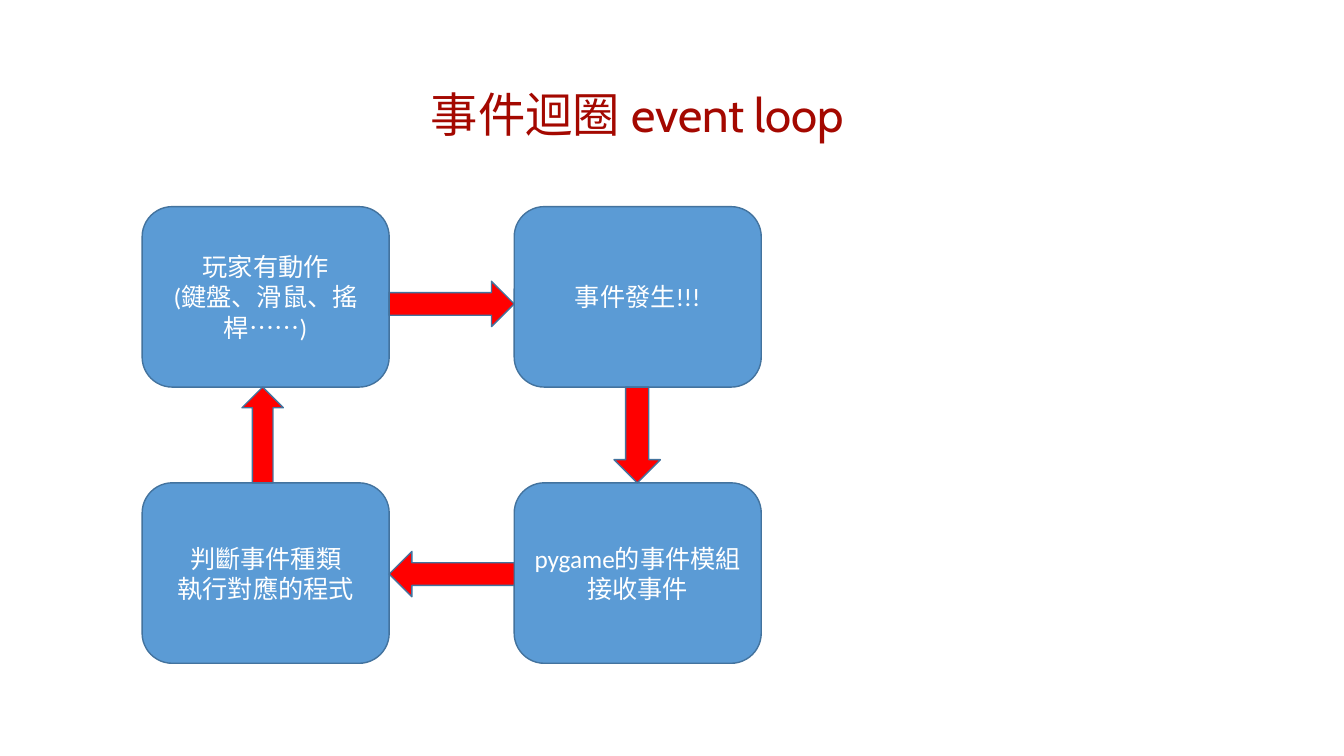
from pptx import Presentation
from pptx.dml.color import RGBColor
from pptx.enum.shapes import MSO_SHAPE as Shape
from pptx.enum.text import MSO_ANCHOR as Anchor, PP_ALIGN as Align
from pptx.util import Inches, Pt

TITLE = "事件迴圈 event loop"
# column, row, text
STEPS = [
    (0, 0, "玩家有動作\n(鍵盤、滑鼠、搖桿……)"),
    (1, 0, "事件發生!!!"),
    (1, 1, "pygame的事件模組接收事件"),
    (0, 1, "判斷事件種類\n執行對應的程式"),
]
COLUMNS, ROWS = (1.41, 5.1), (2.05, 4.79)
STEP_W, STEP_H = 2.45, 1.79
GAP_X = COLUMNS[1] - COLUMNS[0] - STEP_W
GAP_Y = ROWS[1] - ROWS[0] - STEP_H
GAP_LEFT, GAP_TOP = COLUMNS[0] + STEP_W, ROWS[0] + STEP_H
# preset, left, top, width, height, rotation
ARROWS = [
    (Shape.RIGHT_ARROW, GAP_LEFT, 2.79, GAP_X, 0.45, 0),
    (Shape.DOWN_ARROW, 6.09, GAP_TOP, 0.46, GAP_Y, 0),
    (Shape.RIGHT_ARROW, GAP_LEFT, 5.47, GAP_X, 0.45, 180),
    (Shape.DOWN_ARROW, 2.4, GAP_TOP, 0.41, GAP_Y, 180),
]


def color(value):
    return RGBColor.from_string(value)


def write(shape, text, font, size, ink):
    """Fill the shape with centred text, one paragraph per line."""
    frame = shape.text_frame
    frame.word_wrap = True
    frame.vertical_anchor = Anchor.MIDDLE
    frame.text = text
    for paragraph in frame.paragraphs:
        paragraph.alignment = Align.CENTER
        for run in paragraph.runs:
            run.font.name = font
            run.font.size = Pt(size)
            run.font.color.rgb = color(ink)


def add_block(slide, preset, left, top, width, height, fill):
    block = slide.shapes.add_shape(
        preset, Inches(left), Inches(top), Inches(width), Inches(height))
    block.shadow.inherit = False
    block.fill.solid()
    block.fill.fore_color.rgb = color(fill)
    block.line.color.rgb = color("43739E")
    block.line.width = Pt(1)
    return block


def main():
    deck = Presentation()
    deck.slide_width, deck.slide_height = Inches(13.33), Inches(7.5)
    slide = deck.slides.add_slide(deck.slide_layouts[5])

    title = slide.shapes.title
    title.left, title.top = Inches(2.4), Inches(0.85)
    title.width, title.height = Inches(7.85), Inches(0.56)
    frame = title.text_frame
    frame.margin_left = frame.margin_right = 0
    frame.margin_top = frame.margin_bottom = 0
    write(title, TITLE, "Cabin", 33.8, "A40800")

    for column, row, text in STEPS:
        step = add_block(slide, Shape.ROUNDED_RECTANGLE, COLUMNS[column],
                         ROWS[row], STEP_W, STEP_H, "5B9BD5")
        write(step, text, "Calibri", 18, "FFFFFF")

    for *placement, rotation in ARROWS:
        arrow = add_block(slide, *placement, "FF0000")
        arrow.rotation = rotation

    deck.save("out.pptx")


if __name__ == "__main__":
    main()
